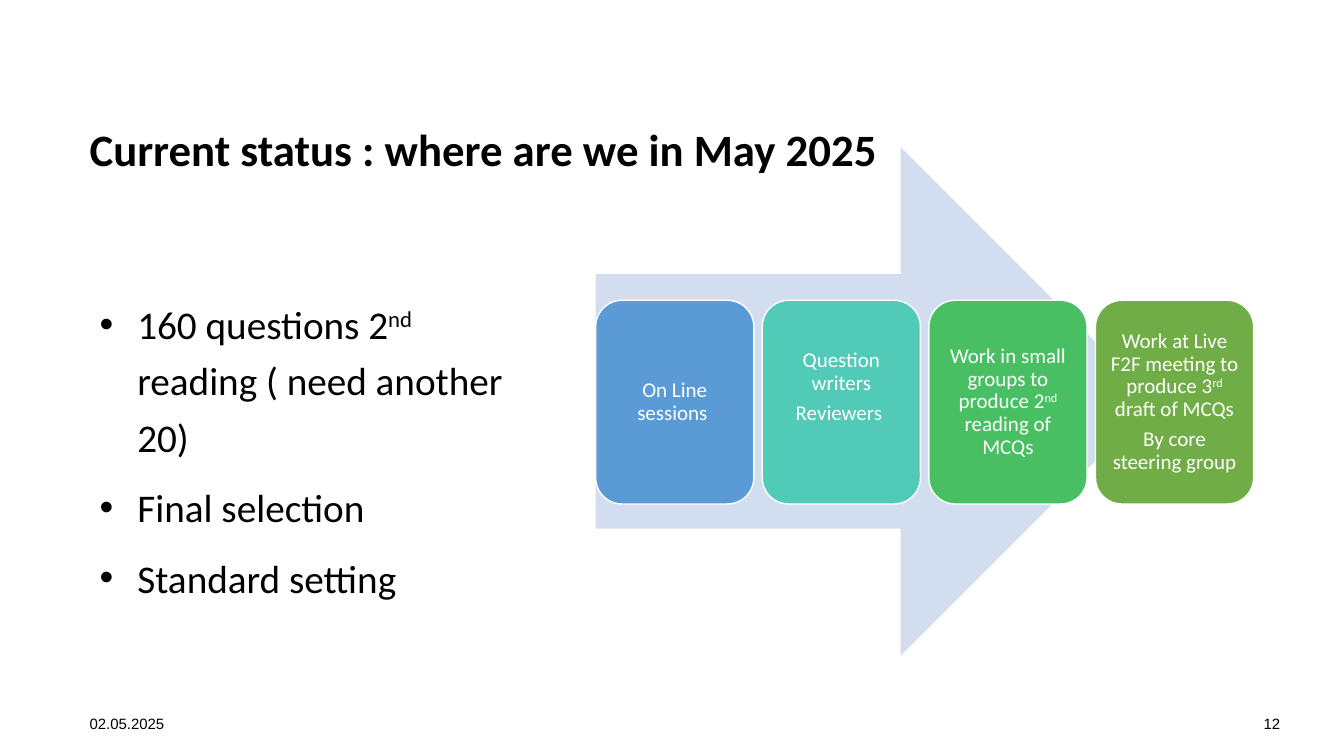
import pptx
import pptx.util
import pptx.dml.color
import pptx.enum.shapes
import pptx.enum.text
import lxml.etree
import pptx.oxml.ns

Pt = pptx.util.Pt
RGBColor = pptx.dml.color.RGBColor
SHAPES = pptx.enum.shapes.MSO_SHAPE
ALIGN = pptx.enum.text.PP_ALIGN
ANCHOR = pptx.enum.text.MSO_ANCHOR

BLACK = RGBColor(0x00, 0x00, 0x00)
WHITE = RGBColor(0xFF, 0xFF, 0xFF)
PALE_BLUE = RGBColor(0xD2, 0xDE, 0xEF)
BLUE = RGBColor(0x5B, 0x9B, 0xD5)
TEAL = RGBColor(0x52, 0xCA, 0xB8)
GREEN = RGBColor(0x49, 0xBF, 0x64)
OLIVE = RGBColor(0x70, 0xAD, 0x47)


def write_paragraphs(frame, texts, size, color, align, font="Calibri", bold=False):
    frame.word_wrap = True
    for index, text in enumerate(texts):
        paragraph = frame.add_paragraph() if index else frame.paragraphs[0]
        paragraph.alignment = align
        for part, piece in enumerate(text.split("^")):
            run = paragraph.add_run()
            run.text = piece
            run.font.name = font
            run.font.size = Pt(size)
            run.font.bold = bold
            run.font.color.rgb = color
            if part % 2:
                run.font._element.set("baseline", "30000")


def set_margins(frame, side, bottom):
    frame.margin_left = frame.margin_top = frame.margin_right = Pt(side)
    frame.margin_bottom = Pt(bottom)


presentation = pptx.Presentation()
presentation.slide_width = Pt(960)
presentation.slide_height = Pt(540)
slide = presentation.slides.add_slide(presentation.slide_layouts[6])

labels = [
    ("Current status : where are we in May 2025", 64, 91.5, 850, 85.5, 32, "Calibri", True, ALIGN.LEFT),
    ("02.05.2025", 64, 510.5, 216, 20, 10.7, "Arial", False, ALIGN.LEFT),
    ("12", 698.5, 510.5, 216, 20, 10.7, "Arial", False, ALIGN.RIGHT),
]
for text, left, top, width, height, size, font, bold, align in labels:
    label = slide.shapes.add_textbox(Pt(left), Pt(top), Pt(width), Pt(height))
    set_margins(label.text_frame, 0, 0)
    write_paragraphs(label.text_frame, [text], size, BLACK, align, font, bold)
    if bold:
        label.text_frame.paragraphs[0].line_spacing = 0.9

status_list = slide.shapes.add_textbox(Pt(64), Pt(204), Pt(328), Pt(274))
status_items = ["160 questions 2^nd^ reading ( need another 20)", "Final selection", "Standard setting"]
write_paragraphs(status_list.text_frame, status_items, 28, BLACK, ALIGN.LEFT)
for paragraph in status_list.text_frame.paragraphs:
    paragraph.line_spacing = 1.2
    paragraph.space_before = Pt(10)
    properties = paragraph._p.get_or_add_pPr()
    properties.set("marL", str(Pt(27)))
    properties.set("indent", str(Pt(-27)))
    for tag, name, value in [("a:buFont", "typeface", "Arial"), ("a:buChar", "char", "•")]:
        lxml.etree.SubElement(properties, pptx.oxml.ns.qn(tag)).set(name, value)

arrow = slide.shapes.add_shape(SHAPES.RIGHT_ARROW, Pt(425.5), Pt(105), Pt(399.5), Pt(363.5))
arrow.shadow.inherit = False
arrow.fill.solid()
arrow.fill.fore_color.rgb = PALE_BLUE
arrow.line.fill.background()

steps = [
    (BLUE, ["On Line sessions "], 4.5),
    (TEAL, ["Question writers", "Reviewers "], 26),
    (GREEN, ["Work in small groups to produce 2^nd^ reading of MCQs"], 4.5),
    (OLIVE, ["Work at Live F2F meeting to produce 3^rd^ draft of MCQs", "By core steering group"], 4.5),
]
for index, (color, texts, bottom) in enumerate(steps):
    step = slide.shapes.add_shape(
        SHAPES.ROUNDED_RECTANGLE, Pt(425.5 + 119 * index), Pt(214.5), Pt(113), Pt(145.5))
    step.shadow.inherit = False
    step.fill.solid()
    step.fill.fore_color.rgb = color
    step.line.color.rgb = WHITE
    step.line.width = Pt(1)
    set_margins(step.text_frame, 4.5, bottom)
    step.text_frame.vertical_anchor = ANCHOR.MIDDLE
    write_paragraphs(step.text_frame, texts, 15, WHITE, ALIGN.CENTER)
    for paragraph in step.text_frame.paragraphs:
        paragraph.line_spacing = 0.9
        paragraph.space_after = Pt(5.25)

presentation.save("out.pptx")
